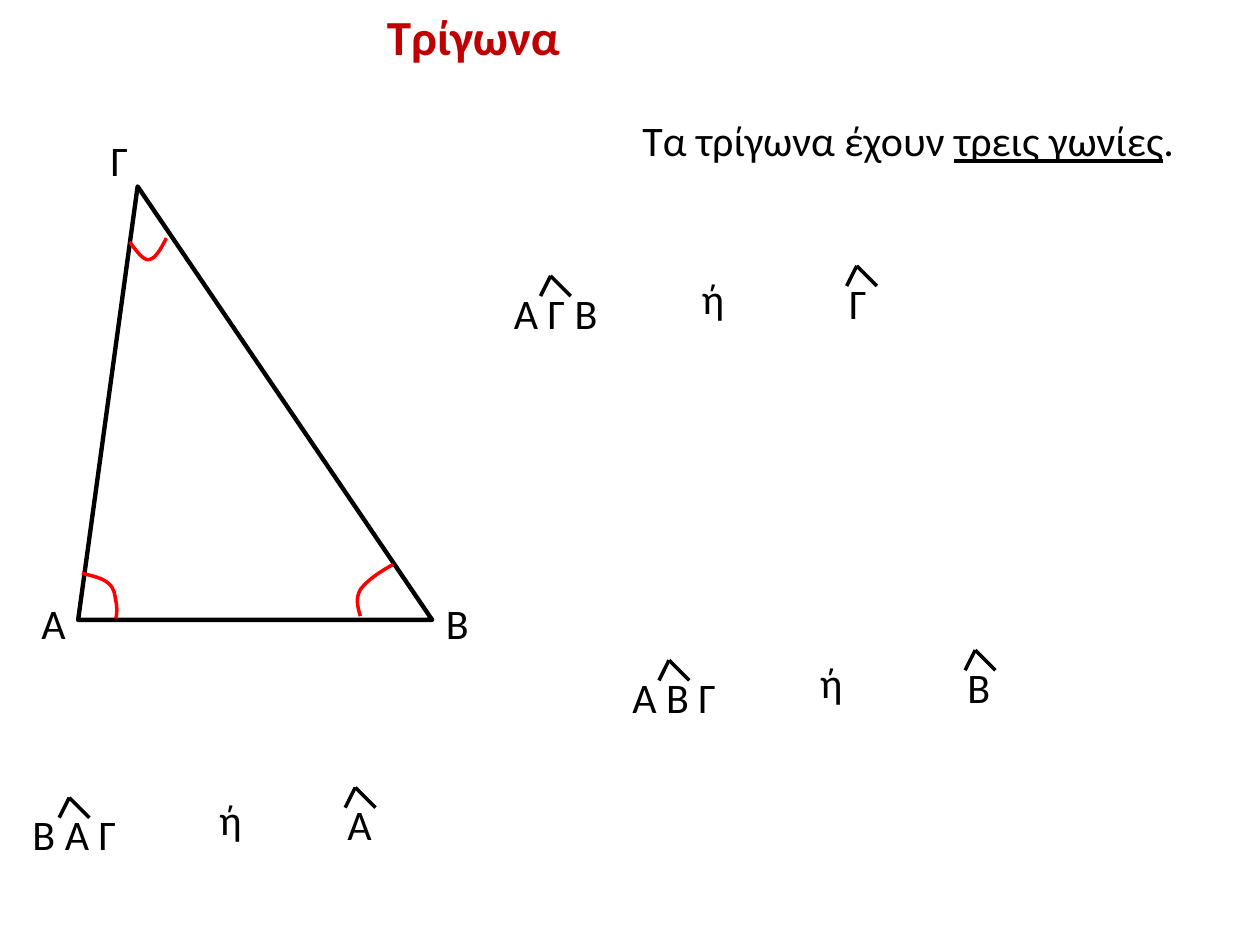
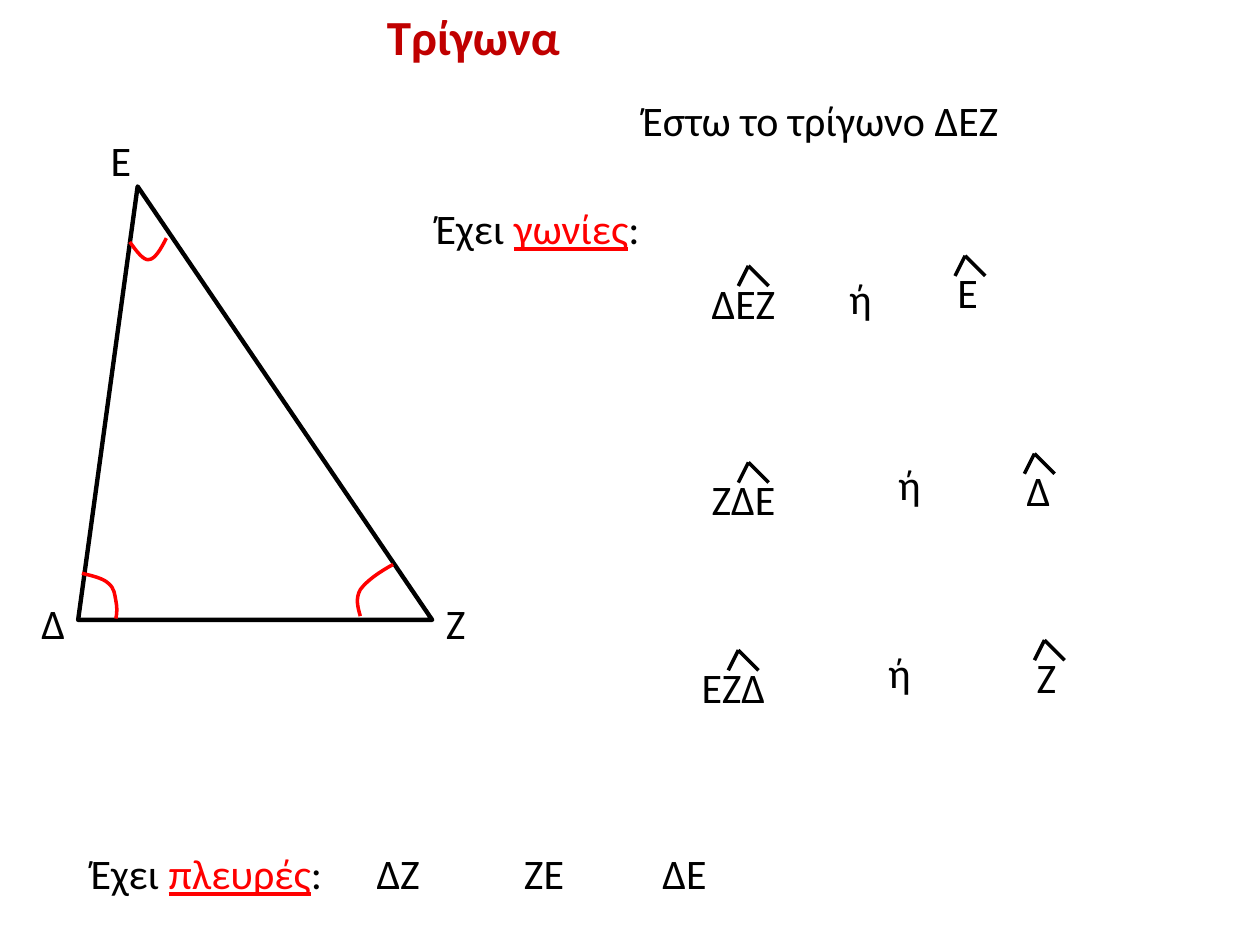
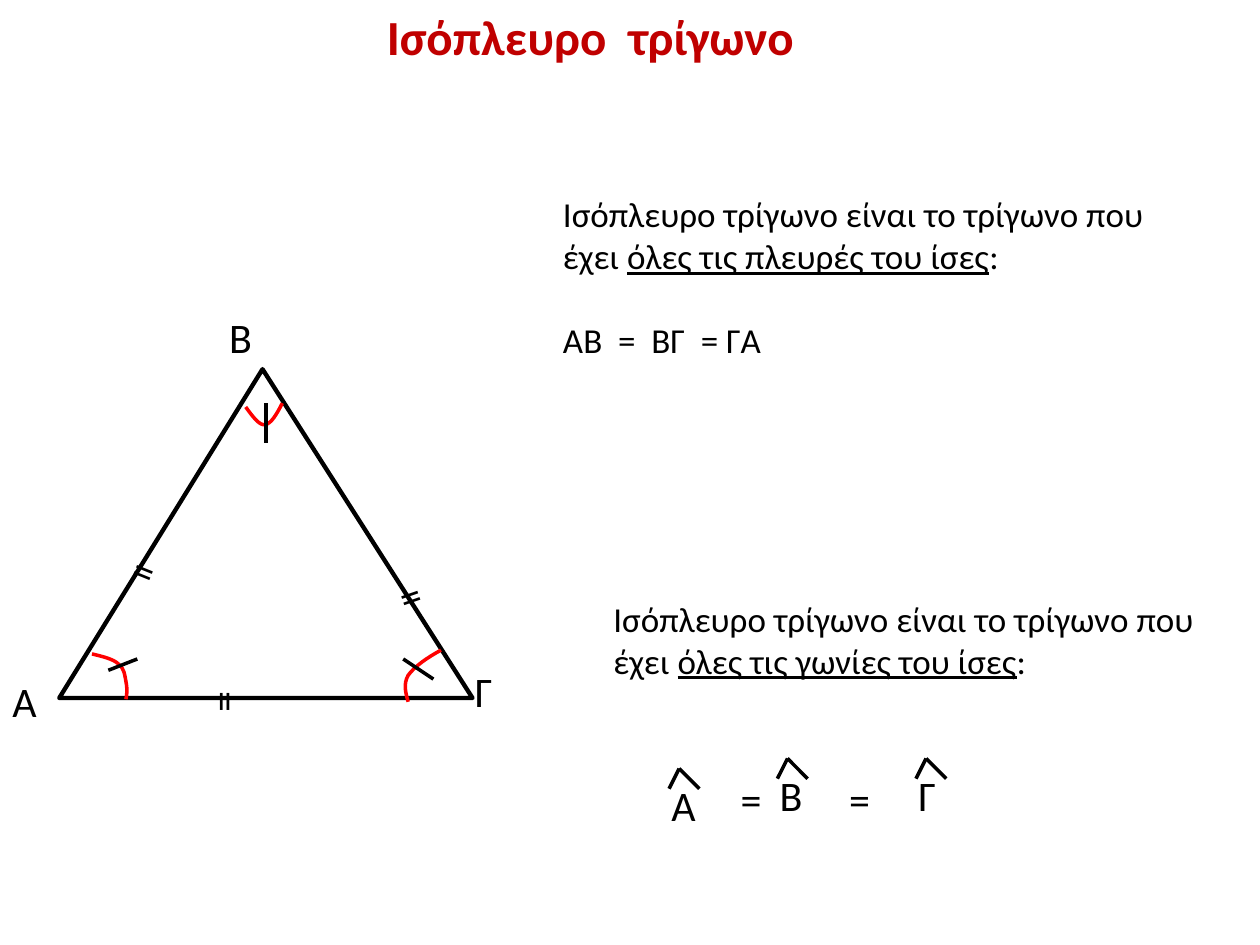
from lxml.etree import SubElement
from pptx import Presentation
from pptx.dml.color import RGBColor
from pptx.enum.shapes import MSO_CONNECTOR, MSO_SHAPE
from pptx.enum.text import MSO_ANCHOR, MSO_AUTO_SIZE, PP_ALIGN
from pptx.oxml.ns import qn
from pptx.util import Inches, Pt

FONT = "Calibri"
COLORS = {"title": "C00000", "ink": "000000", "mark": "FF0000"}
TITLE_BOX = (2.97, 0, 5, 0.57)

# Angle arcs as Bezier points, measured from the arc's top left corner
ARCS = {
    "left": [(0, 0), (0.08, 0.02), (0.17, 0.04), (0.21, 0.08), (0.26, 0.12),
             (0.26, 0.17), (0.27, 0.22), (0.28, 0.27), (0.28, 0.31), (0.27, 0.36)],
    "top": [(0, 0.03), (0.05, 0.1), (0.11, 0.18), (0.15, 0.17), (0.2, 0.17),
            (0.25, 0.08), (0.29, 0)],
    "right": [(0.04, 0.41), (0.02, 0.34), (0, 0.27), (0.04, 0.2), (0.09, 0.13),
              (0.19, 0.06), (0.3, 0)],
}

# Triangles: box, apex position, arc corners, label corners (left, right, top)
SCALENE = {
    "box": (0.62, 1.48, 2.81, 3.44), "apex": 0.168,
    "arcs": {"top": (1.03, 1.89), "left": (0.65, 4.55), "right": (2.82, 4.48)},
    "labels": [(0.23, 4.69), (3.44, 4.69), (0.78, 1.02)],
}
EQUILATERAL = {
    "box": (0.47, 2.93, 3.28, 2.61), "apex": 0.492,
    "arcs": {"top": (1.95, 3.2), "left": (0.73, 5.19), "right": (3.2, 5.16)},
    "labels": [(0, 5.31), (3.67, 5.23), (1.72, 2.42)],
}

# A run is (text, colour, underlined); a text is (box, size, paragraphs)
# An angle is (text, left, top); texts of three letters have the hat in the middle
SLIDES = [
    {
        "title": "Τρίγωνα", "triangle": SCALENE, "vertices": "ΑΒΓ",
        "texts": [((5, 0.86, 5, 0.91), 24, [[("Τα τρίγωνα έχουν ", "ink", False),
                                            ("τρεις γωνίες", "ink", True),
                                            (".", "ink", False)]])],
        "words": [("ή", 5.47, 2.11), ("ή", 1.64, 6.25), ("ή", 6.41, 5.16)],
        "angles": [("Α Γ Β", 3.98, 2.23), ("Γ", 6.64, 2.15),
                   ("Β Α Γ", 0.16, 6.37), ("Α", 2.66, 6.29),
                   ("Α Β Γ", 4.92, 5.28), ("Β", 7.58, 5.2)],
    },
    {
        "title": "Τρίγωνα", "triangle": SCALENE, "vertices": "ΔΖΕ",
        "texts": [
            ((5, 0.7, 5, 0.91), 24, [[("Έστω το τρίγωνο ΔΕΖ", "ink", False)]]),
            ((3.36, 1.56, 3.52, 0.5), 24, [[("Έχει ", "ink", False),
                                            ("γωνίες", "mark", True),
                                            (":", "ink", False)]]),
            ((0.62, 6.68, 2.11, 0.5), 24, [[("Έχει ", "ink", False),
                                            ("πλευρές", "mark", True),
                                            (":", "ink", False)]]),
        ],
        "words": [("ή", 6.64, 2.11), ("ή", 7.03, 3.59), ("ή", 6.95, 5.08),
                  ("ΔΖ", 2.89, 6.68), ("ΖΕ", 4.06, 6.68), ("ΔΕ", 5.16, 6.68)],
        "angles": [("ΔΕΖ", 5.55, 2.15), ("Ε", 7.5, 2.07),
                   ("ΖΔΕ", 5.55, 3.71), ("Δ", 8.05, 3.64),
                   ("ΕΖΔ", 5.47, 5.2), ("Ζ", 8.13, 5.12)],
    },
    {
        "title": "Ισόπλευρο  τρίγωνο", "triangle": EQUILATERAL, "vertices": "ΑΓΒ",
        "texts": [
            ((4.37, 1.48, 5, 1.45), 20,
             [[("Ισόπλευρο τρίγωνο είναι το τρίγωνο που έχει ", "ink", False),
               ("όλες τις πλευρές του ίσες", "ink", True), (":", "ink", False)],
              [("ΑΒ  =  ΒΓ  = ΓΑ", "ink", False)]]),
            ((4.77, 4.69, 5, 0.77), 20,
             [[("Ισόπλευρο τρίγωνο είναι το τρίγωνο που έχει ", "ink", False),
               ("όλες τις γωνίες του ίσες", "ink", True), (":", "ink", False)]]),
        ],
        "words": [("=", 5.78, 6.09), ("=", 6.64, 6.09)],
        "angles": [("Α", 5.23, 6.14), ("Β", 6.09, 6.06), ("Γ", 7.19, 6.06)],
        # Equal sides: left, top, rotation; equal angles: start and end
        "side_marks": [(3.06, 4.41, 340.9), (0.95, 4.35, 22), (1.42, 5.53, 90)],
        "angle_marks": [(3.2, 5.23, 3.44, 5.39), (0.86, 5.32, 1.09, 5.23),
                        (2.11, 3.2, 2.11, 3.52)],
    },
]


def rgb(name):
    return RGBColor.from_string(COLORS[name])


def style_line(shape, color, width):
    shape.line.color.rgb = rgb(color)
    shape.line.width = Pt(width)


def style_run(r, size, color, bold=False, underline=False):
    r.font.name, r.font.size, r.font.bold = FONT, Pt(size), bold
    r.font.underline = underline
    r.font.color.rgb = rgb(color)


def add_title(s, text):
    title = s.shapes.title
    title.left, title.top, title.width, title.height = map(Inches, TITLE_BOX)
    tf = title.text_frame
    tf.text = text
    tf.auto_size, tf.vertical_anchor = MSO_AUTO_SIZE.NONE, MSO_ANCHOR.TOP
    p = tf.paragraphs[0]
    p.alignment = PP_ALIGN.LEFT
    style_run(p.runs[0], 28, "title", bold=True)


def add_text(s, box, size, paragraphs):
    sp = s.shapes.add_textbox(*map(Inches, box))
    tf = sp.text_frame
    tf.word_wrap = True
    for i, runs in enumerate(paragraphs):
        p = tf.add_paragraph() if i else tf.paragraphs[0]
        if i:
            p.space_before = Pt(24)
        for text, color, underline in runs:
            r = p.add_run()
            r.text = text
            style_run(r, size, color, underline=underline)
    return sp


def add_word(s, text, left, top, width=0.86):
    return add_text(s, (left, top, width, 0.5), 24, [[(text, "ink", False)]])


def add_line(shapes, x1, y1, x2, y2):
    line = shapes.add_connector(MSO_CONNECTOR.STRAIGHT, *map(Inches, (x1, y1, x2, y2)))
    style_line(line, "ink", 2)
    SubElement(line._element.spPr, qn("a:effectLst"))


def add_angle(s, text, left, top):
    add_word(s, text, left, top, 1.17 if len(text) > 1 else 0.7)
    x, y = left + (0.39 if len(text) > 1 else 0.16), top - 0.04
    hat = s.shapes.add_group_shape()
    for dx in (-0.08, 0.16):
        add_line(hat.shapes, x, y, x + dx, y + 0.16)


def add_arc(s, points, left, top):
    pts = [(Inches(left + x), Inches(top + y)) for x, y in points]
    builder = s.shapes.build_freeform(*pts[0])
    builder.add_line_segments(pts[1:], close=False)
    arc = builder.convert_to_shape()
    arc.shadow.inherit = False
    arc.fill.background()
    style_line(arc, "mark", 2)
    # Every three line points become one Bezier curve
    path = arc._element.find(".//" + qn("a:path"))
    segments = path.findall(qn("a:lnTo"))
    for i in range(0, len(segments), 3):
        curve = SubElement(path, qn("a:cubicBezTo"))
        for segment in segments[i:i + 3]:
            curve.append(segment[0])
            path.remove(segment)


def add_triangle(s, triangle, vertices):
    sp = s.shapes.add_shape(MSO_SHAPE.ISOSCELES_TRIANGLE, *map(Inches, triangle["box"]))
    sp.adjustments[0] = triangle["apex"]
    sp.shadow.inherit = False
    sp.fill.background()
    style_line(sp, "ink", 2.5)
    for letter, corner in zip(vertices, triangle["labels"]):
        add_word(s, letter, *corner, 0.55)
    for name, corner in triangle["arcs"].items():
        add_arc(s, ARCS[name], *corner)


def main():
    prs = Presentation()
    prs.slide_width, prs.slide_height = Inches(10), Inches(7.5)
    for content in SLIDES:
        s = prs.slides.add_slide(prs.slide_layouts[5])
        add_title(s, content["title"])
        add_triangle(s, content["triangle"], content["vertices"])
        for text in content["texts"]:
            add_text(s, *text)
        for word in content["words"]:
            add_word(s, *word)
        for angle in content["angles"]:
            add_angle(s, *angle)
        for left, top, rotation in content.get("side_marks", []):
            add_word(s, "=", left, top, 0.78).rotation = rotation
        for mark in content.get("angle_marks", []):
            add_line(s.shapes, *mark)
    prs.save("out.pptx")


if __name__ == "__main__":
    main()
